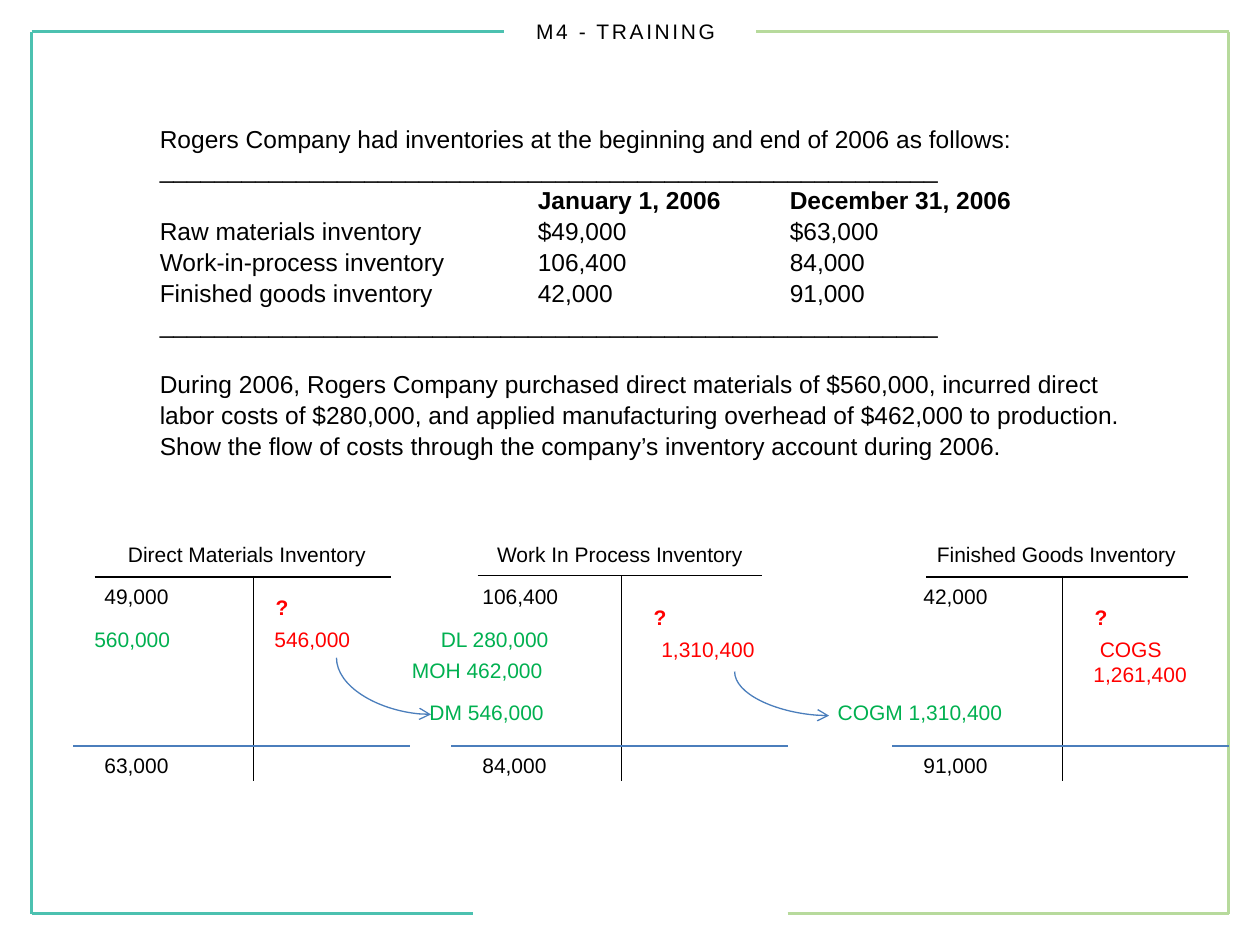
import lxml.etree
import pptx
import pptx.dml.color
import pptx.enum.shapes
import pptx.enum.text
import pptx.oxml.ns
import pptx.util

Inches = pptx.util.Inches
Pt = pptx.util.Pt
qn = pptx.oxml.ns.qn
CONNECTOR = pptx.enum.shapes.MSO_CONNECTOR
ANCHOR = pptx.enum.text.MSO_ANCHOR
ALIGN = pptx.enum.text.PP_ALIGN

COLORS = {
    "teal": "4CC1B0", "lime": "B7DA9C", "black": "000000", "white": "FFFFFF",
    "blue": "4B7EBC", "green": "00B050", "red": "FF0000",
}

# Frame segments: x1, y1, x2, y2, colour
FRAME = [
    (0.25, 0.25, 0.25, 7.25, "teal"),
    (9.75, 0.25, 9.75, 7.25, "lime"),
    (0.25, 7.25, 3.75, 7.25, "teal"),
    (6.25, 7.25, 9.75, 7.25, "lime"),
    (0.25, 0.25, 4, 0.25, "teal"),
    (6, 0.25, 9.75, 0.25, "lime"),
]

RULE = "_" * 57
# Problem statement: text, bold, space before in points
PROBLEM = [
    ("Rogers Company had inventories at the beginning and end of 2006 as follows:", False, 0),
    (RULE, False, 0),
    ("\tJanuary 1, 2006\tDecember 31, 2006", True, 0),
    ("Raw materials inventory\t$49,000\t$63,000", False, 0),
    ("Work-in-process inventory\t106,400\t84,000", False, 0),
    ("Finished goods inventory\t42,000\t91,000", False, 0),
    (RULE, False, 0),
    ("During 2006, Rogers Company purchased direct materials of $560,000, incurred direct "
     "labor costs of $280,000, and applied manufacturing overhead of $462,000 to production. "
     "Show the flow of costs through the company’s inventory account during 2006.", False, 16.9),
]

# T-accounts: name, heading left and width, bar left, right and y, stem x,
# total line left, balance left, opening and closing balance
ACCOUNTS = [
    ("Finished Goods Inventory", 7.17, 2.43, 7.35, 9.43, 4.58, 8.43, 7.08, 7, "42,000", "91,000"),
    ("Work In Process Inventory", 3.58, 2.68, 3.79, 6.05, 4.57, 4.93, 3.58, 3.5, "106,400", "84,000"),
    ("Direct Materials Inventory", 0.67, 2.58, 0.75, 3.1, 4.58, 2.01, 0.58, 0.5, "49,000", "63,000"),
]

# Entries: left, top, width, text, colour, indent
ENTRIES = [
    (0.42, 4.92, 1.42, "560,000", "green", 0.23),
    (3.17, 4.92, 1.75, "DL 280,000", "green", 0.23),
    (3.17, 5.17, 1.75, "MOH 462,000", "green", 0),
    (3.17, 5.5, 1.75, "DM 546,000", "green", 0.14),
    (6.5, 5.5, 2.08, "COGM 1,310,400", "green", 0.05),
    (2.08, 4.92, 1.17, "546,000", "red", 0),
    (4.92, 5, 1.58, "1,310,400", "red", 0.23),
]
QUESTION_MARKS = [(2, 4.67), (5, 4.75), (8.5, 4.75)]

# Flow arrows: start x, start y, end x, end y
FLOWS = [(2.67, 5.22, 3.42, 5.67), (5.83, 5.33, 6.58, 5.68)]


def rgb(name):
    return pptx.dml.color.RGBColor.from_string(COLORS[name])


def style_line(line, color, width):
    line.line.color.rgb = rgb(color)
    line.line.width = Pt(width)
    lxml.etree.SubElement(line._element.spPr, qn("a:effectLst"))


def add_line(page, x1, y1, x2, y2, color, width=0.75):
    line = page.shapes.add_connector(
        CONNECTOR.STRAIGHT, Inches(x1), Inches(y1), Inches(x2), Inches(y2))
    style_line(line, color, width)


def add_flow(page, x1, y1, x2, y2):
    """Curved arrow that leaves downwards and arrives from the left."""
    middle_x, middle_y = (x1 + x2) / 2, (y1 + y2) / 2
    half_width, half_height = (y2 - y1) / 2, (x2 - x1) / 2
    arrow = page.shapes.add_connector(
        CONNECTOR.CURVE,
        Inches(middle_x + half_width), Inches(middle_y - half_height),
        Inches(middle_x - half_width), Inches(middle_y + half_height))
    properties = arrow._element.spPr
    properties.find(qn("a:xfrm")).set("rot", str(270 * 60000))
    properties.find(qn("a:prstGeom")).set("prst", "curvedConnector2")
    style_line(arrow, "blue", 0.75)
    outline = properties.find(qn("a:ln"))
    lxml.etree.SubElement(outline, qn("a:tailEnd")).set("type", "arrow")


def add_span(para, text, color="black", size=12, bold=False):
    span = para.add_run()
    span.text = text
    formats = {"name": "Arial", "size": Pt(size), "bold": bold}
    for key, value in formats.items():
        setattr(span.font, key, value)
    span.font.color.rgb = rgb(color)
    return span


def add_box(page, left, top, width, height, anchor=ANCHOR.TOP):
    box = page.shapes.add_textbox(Inches(left), Inches(top), Inches(width), Inches(height))
    box.text_frame.word_wrap = True
    box.text_frame.vertical_anchor = anchor
    return box.text_frame


def set_indent(para, indent):
    properties = para._p.get_or_add_pPr()
    properties.set("marL", str(Inches(indent)))
    properties.set("indent", "0")


def add_entry(page, left, top, width, text, color="black", indent=0.0, bold=False):
    para = add_box(page, left, top, width, 0.3).paragraphs[0]
    set_indent(para, indent)
    add_span(para, text, color, bold=bold)


def add_title(page):
    para = add_box(page, 0, 0, 10, 0.5, ANCHOR.MIDDLE).paragraphs[0]
    para.alignment = ALIGN.CENTER
    span = add_span(para, "M4 - TRAINING ")
    span._r.get_or_add_rPr().set("spc", "150")


def add_problem(page):
    frame = add_box(page, 1.17, 0.92, 8, 2.93)
    for index, (text, bold, space) in enumerate(PROBLEM):
        para = frame.add_paragraph() if index else frame.paragraphs[0]
        if "\t" in text:
            stops = lxml.etree.SubElement(para._p.get_or_add_pPr(), qn("a:tabLst"))
            for position in (3, 5):
                stop = lxml.etree.SubElement(stops, qn("a:tab"))
                stop.set("pos", str(Inches(position)))
                stop.set("algn", "l")
        para.line_spacing = 1.05
        if space:
            para.space_before = Pt(space)
        add_span(para, text, size=14, bold=bold)


def add_account(page, name, left, width, bar_left, bar_right, bar_y, stem_x,
                total_left, balance_left, opening, closing):
    add_line(page, stem_x, 4.57, stem_x, 6.2, "black")
    add_line(page, bar_left, bar_y, bar_right, bar_y, "black")
    heading = page.shapes.add_shape(
        pptx.enum.shapes.MSO_SHAPE.RECTANGLE,
        Inches(left), Inches(4.25), Inches(width), Inches(0.24))
    heading.shadow.inherit = False
    heading.fill.solid()
    heading.fill.fore_color.rgb = rgb("white")
    heading.line.fill.background()
    heading.text_frame.vertical_anchor = ANCHOR.TOP
    para = heading.text_frame.paragraphs[0]
    para.alignment = ALIGN.CENTER
    add_span(para, name)
    add_line(page, total_left, 5.92, total_left + 2.67, 5.92, "blue")
    for top, amount in ((4.58, opening), (5.92, closing)):
        add_entry(page, balance_left, top, 1.42, amount, indent=0.23)


def add_cost_of_sales(page):
    frame = add_box(page, 8.58, 5, 1.08, 0.5)
    first = frame.paragraphs[0]
    set_indent(first, 0.05)
    add_span(first, "COGS", "red")
    add_span(frame.add_paragraph(), "1,261,400", "red")


def main():
    deck = pptx.Presentation()
    deck.slide_width, deck.slide_height = Inches(10), Inches(7.5)
    page = deck.slides.add_slide(deck.slide_layouts[6])

    # Frame and title
    for segment in FRAME:
        add_line(page, *segment, width=2.25)
    add_title(page)

    # Problem statement
    add_problem(page)

    # T-accounts with their entries
    for account in ACCOUNTS:
        add_account(page, *account)
    for entry in ENTRIES:
        add_entry(page, *entry)
    for left, top in QUESTION_MARKS:
        add_entry(page, left, top, 1.17, "?", "red", 0.09, True)
    add_cost_of_sales(page)

    # Cost flow between accounts
    for flow in FLOWS:
        add_flow(page, *flow)

    deck.save("out.pptx")


if __name__ == "__main__":
    main()
